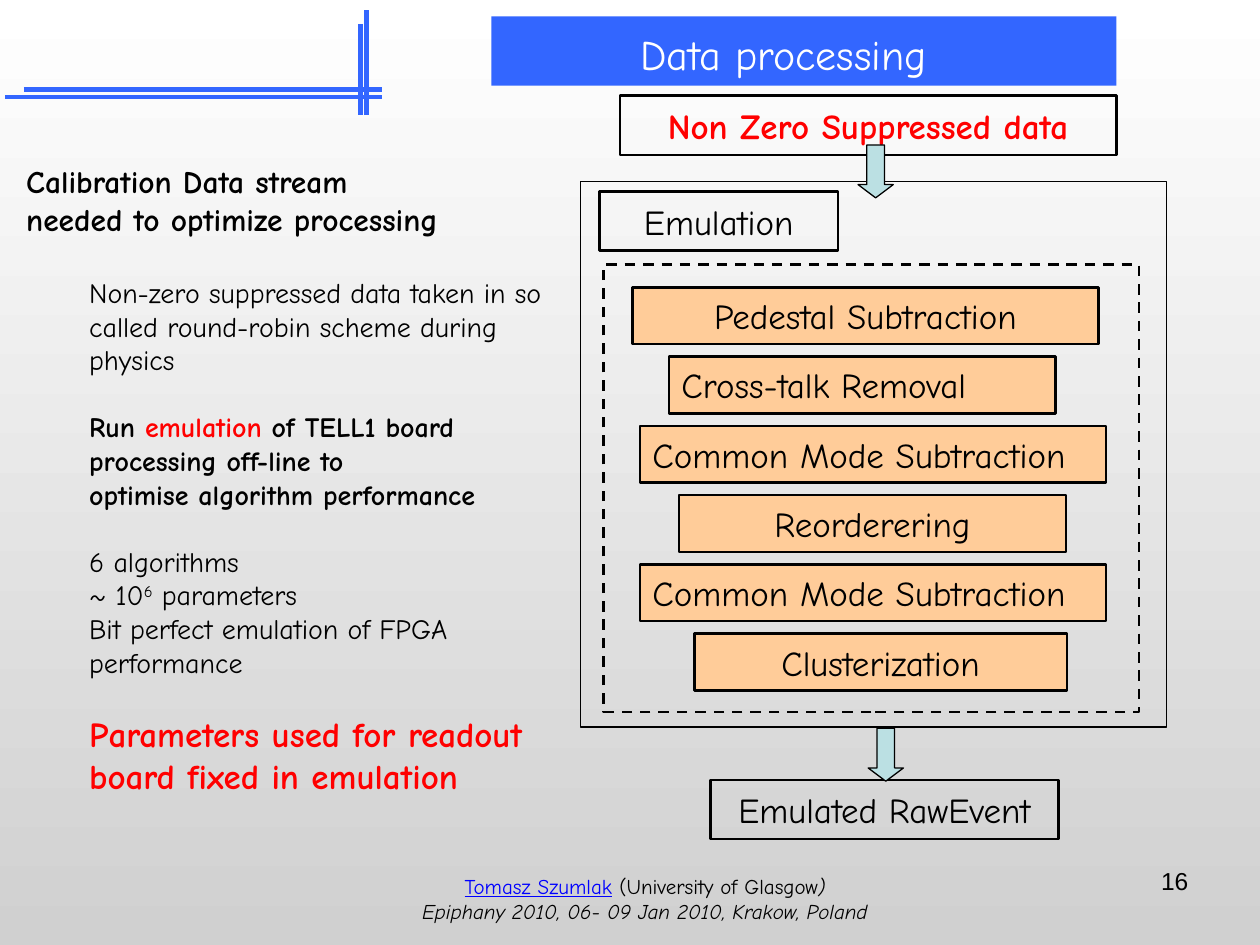
from dataclasses import dataclass

from lxml import etree
from pptx import Presentation
from pptx.dml.color import RGBColor
from pptx.enum.dml import MSO_LINE
from pptx.enum.shapes import MSO_CONNECTOR, MSO_SHAPE
from pptx.enum.text import MSO_ANCHOR, PP_ALIGN
from pptx.oxml.ns import qn
from pptx.util import Inches, Pt

LEFT, CENTER, RIGHT = PP_ALIGN.LEFT, PP_ALIGN.CENTER, PP_ALIGN.RIGHT
MIDDLE = MSO_ANCHOR.MIDDLE
RECTANGLE, DOWN_ARROW = MSO_SHAPE.RECTANGLE, MSO_SHAPE.DOWN_ARROW


@dataclass(frozen=True)
class Theme:
    font: str = "Comic Neue"
    number_font: str = "Arial"
    black: str = "000000"
    white: str = "FFFFFF"
    blue: str = "3366FF"
    link: str = "0000FF"
    red: str = "FF0000"
    step: str = "FFCC99"
    arrow: str = "BBE0E3"
    background_end: str = "D0D0D0"
    title: float = 24
    large: float = 20
    heading: float = 18
    body: float = 16
    number: float = 14
    footer: float = 12


theme = Theme()


def write(paragraph, text, size=theme.body, color=theme.black, bold=False, italic=False,
          underline=False, superscript=False, font=theme.font):
    run = paragraph.add_run()
    run.text = text
    run.font.name = font
    run.font.size = Pt(size)
    run.font.bold = bold
    run.font.italic = italic
    run.font.underline = underline
    run.font.color.rgb = RGBColor.from_string(color)
    if superscript:
        run.font._element.set("baseline", "30000")


def add_shape(kind, left, top, width, height, fill=None, line_width=1.5):
    shape = slide.shapes.add_shape(kind, Inches(left), Inches(top), Inches(width), Inches(height))
    shape.shadow.inherit = False
    if fill:
        shape.fill.solid()
        shape.fill.fore_color.rgb = RGBColor.from_string(fill)
    else:
        shape.fill.background()
    shape.line.color.rgb = RGBColor.from_string(theme.black)
    shape.line.width = Pt(line_width)
    return shape


presentation = Presentation()
presentation.slide_width = Inches(10)
presentation.slide_height = Inches(7.5)
slide = presentation.slides.add_slide(presentation.slide_layouts[5])

# Background
background = slide.background.fill
background.gradient()
background.gradient_angle = 270
for stop, color in zip(background.gradient_stops, (theme.white, theme.background_end)):
    stop.color.rgb = RGBColor.from_string(color)

# Title bar
title = slide.shapes.title
title.left, title.top, title.width, title.height = (
    Inches(3.9), Inches(0.13), Inches(4.96), Inches(0.55))
title.fill.solid()
title.fill.fore_color.rgb = RGBColor.from_string(theme.blue)
frame = title.text_frame
frame.vertical_anchor = MIDDLE
frame.margin_right = Inches(0.42)
frame.margin_top, frame.margin_bottom = Inches(0.08), Inches(0.04)
frame.paragraphs[0].alignment = CENTER
write(frame.paragraphs[0], "Data processing", size=theme.title, color=theme.white)

# Crossed double lines in the corner
for x1, y1, x2, y2 in (
    (0.19, 0.71, 3.03, 0.71),
    (0.04, 0.77, 3.03, 0.77),
    (2.91, 0.08, 2.91, 0.91),
    (2.86, 0.19, 2.86, 0.91),
):
    line = slide.shapes.add_connector(
        MSO_CONNECTOR.STRAIGHT, Inches(x1), Inches(y1), Inches(x2), Inches(y2))
    line.line.color.rgb = RGBColor.from_string(theme.blue)
    line.line.width = Pt(2.5)
    etree.SubElement(line._element.spPr, qn("a:effectLst"))

# Frames around the emulation
add_shape(RECTANGLE, 4.61, 1.44, 4.65, 4.33, line_width=0.75)
dashed_frame = add_shape(RECTANGLE, 4.79, 2.1, 4.25, 3.55)
dashed_frame.line.dash_style = MSO_LINE.DASH

# Labelled boxes: data in, emulation, data out, then the evenly spaced steps
boxes = [
    ("Non Zero Suppressed data", 4.92, 0.76, 3.94, 0.47, None, CENTER),
    ("Emulation", 4.76, 1.52, 1.89, 0.47, None, CENTER),
    ("Emulated RawEvent", 5.64, 6.19, 2.76, 0.47, None, CENTER),
]
steps = (
    ("Pedestal Subtraction", 5.02, 3.7, CENTER),
    ("Cross-talk Removal", 5.31, 3.07, LEFT),
    ("Common Mode Subtraction", 5.08, 3.7, LEFT),
    ("Reorderering", 5.39, 3.07, CENTER),
    ("Common Mode Subtraction", 5.08, 3.7, LEFT),
    ("Clusterization", 5.51, 2.96, CENTER),
)
for index, (label, left, width, alignment) in enumerate(steps):
    boxes.append((label, left, 2.28 + 0.55 * index, width, 0.45, theme.step, alignment))

for label, left, top, width, height, fill, alignment in boxes:
    box = add_shape(RECTANGLE, left, top, width, height, fill)
    box.text_frame.word_wrap = True
    box.text_frame.vertical_anchor = MIDDLE
    paragraph = box.text_frame.paragraphs[0]
    paragraph.alignment = alignment
    is_input = label.startswith("Non Zero")
    write(paragraph, label, size=theme.large, bold=is_input,
          color=theme.red if is_input else theme.black)

for left, top in ((6.81, 1.15), (6.89, 5.78)):
    arrow = add_shape(DOWN_ARROW, left, top, 0.28, 0.42, theme.arrow, 0.75)
    arrow.adjustments[0], arrow.adjustments[1] = 0.5, 0.375

# Text blocks: position, alignment, then paragraphs as (indent, space before, runs)
heading = dict(size=theme.heading, bold=True)
strong = dict(bold=True)
closing = dict(size=theme.large, color=theme.red, bold=True)
footer = dict(size=theme.footer)
text_blocks = (
    ((0.11, 1.24, 4.53, 5.14), LEFT, (
        (0, 0, [("Calibration Data stream", heading)]),
        (0, 0, [("needed to optimize processing", heading)]),
        (0.5, 21.5, [("Non-zero suppressed data taken in so called round-robin scheme "
                      "during physics", {})]),
        (0.5, 19.2, [("Run ", strong), ("emulation", dict(bold=True, color=theme.red)),
                     (" of TELL1 board processing off-line to", strong)]),
        (0.5, 0, [("optimise algorithm performance", strong)]),
        (0.5, 19.2, [("6 algorithms", {})]),
        (0.5, 0, [("~ 10", {}), ("6", dict(superscript=True)), (" parameters", {})]),
        (0.5, 0, [("Bit perfect emulation of FPGA performance", {})]),
        (0.5, 19.2, [("Parameters used for readout board fixed in emulation", closing)]),
    )),
    ((2.52, 6.88, 5.2, 0.52), CENTER, (
        (0, 0, [("Tomasz Szumlak", dict(footer, color=theme.link, underline=True)),
                (" (University of Glasgow", footer), (")", dict(footer, italic=True))]),
        (0, 0, [("Epiphany 2010, 06- 09 Jan 2010, Krakow, Poland",
                 dict(footer, italic=True))]),
    )),
    ((7.2, 6.82, 2.33, 0.52), RIGHT, (
        (0, 0, [("16", dict(size=theme.number, font=theme.number_font))]),
    )),
)
for position, alignment, paragraphs in text_blocks:
    frame = slide.shapes.add_textbox(*map(Inches, position)).text_frame
    frame.word_wrap = True
    for index, (indent, space_before, runs) in enumerate(paragraphs):
        paragraph = frame.add_paragraph() if index else frame.paragraphs[0]
        paragraph.alignment = alignment
        if indent:
            paragraph._p.get_or_add_pPr().set("marL", str(Inches(indent)))
        if space_before:
            paragraph.space_before = Pt(space_before)
        for text, text_format in runs:
            write(paragraph, text, **text_format)

presentation.save("out.pptx")
